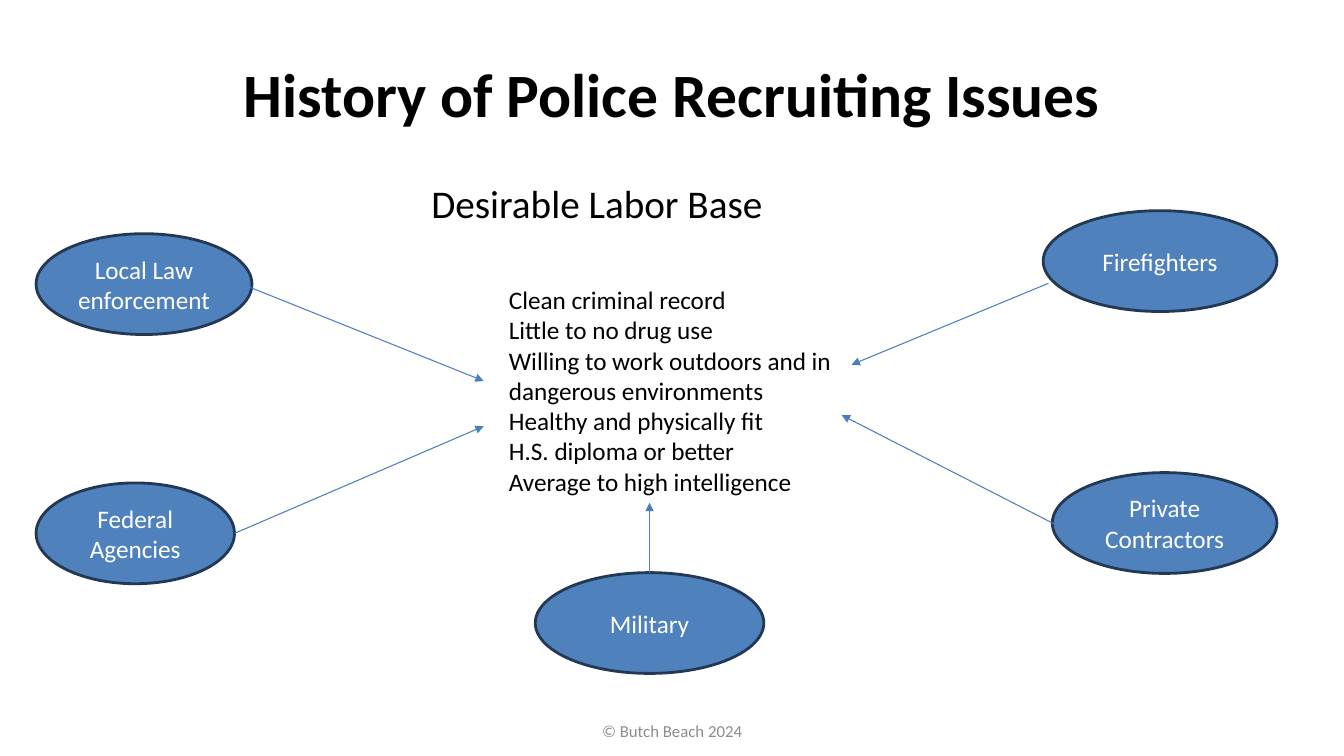
from lxml.etree import SubElement
from pptx import Presentation
from pptx.dml.color import RGBColor
from pptx.enum.shapes import MSO_CONNECTOR as Link, MSO_SHAPE as Preset
from pptx.enum.text import MSO_ANCHOR as Anchor, MSO_AUTO_SIZE as Fit, PP_ALIGN as Align
from pptx.oxml.ns import qn
from pptx.util import Cm, Pt

COLORS = {"text": "000000", "oval": "4F81BD", "outline": "233953",
          "label": "FFFFFF", "arrow": "4B7EBC", "footer": "8C8C8C"}
FONT = "Calibri"
OVAL_HEIGHT = 2.54

TRAITS = ["Clean criminal record", "Little to no drug use",
          "Willing to work outdoors and in dangerous environments",
          "Healthy and physically fit", "H.S. diploma or better",
          "Average to high intelligence"]

# name, oval (left, top, width), arrow start from the oval's corner, arrow tip
RECRUITERS = [
    ("Local Law enforcement", (0.91, 5.89, 5.44), (5.39, 1.35), (12.19, 9.6)),
    ("Federal Agencies", (0.91, 12.17, 5), (5, 1.27), (12.19, 10.74)),
    ("Military", (13.49, 14.43, 5.76), (2.88, 0), (16.37, 12.67)),
    ("Firefighters", (26.29, 5.31, 5.89), (0.13, 1.83), (21.46, 9.19)),
    ("Private Contractors", (26.52, 11.91, 5.66), (0.2, 1.37), (21.21, 10.46)),
]


def color(name):
    return RGBColor.from_string(COLORS[name])


def place(shape, box):
    shape.left, shape.top, shape.width, shape.height = (Cm(side) for side in box)


def write(para, text, size, ink="text", bold=False):
    span = para.add_run()
    span.text = text
    span.font.name = FONT
    span.font.size = Pt(size)
    span.font.bold = bold
    span.font.color.rgb = color(ink)


def add_title(page, box, text):
    title = page.shapes.title
    place(title, box)
    frame = title.text_frame
    frame.auto_size = Fit.NONE
    frame.vertical_anchor = Anchor.MIDDLE
    para = frame.paragraphs[0]
    para.alignment = Align.CENTER
    write(para, text, 44, bold=True)


def add_traits(page, box):
    """Fill the body placeholder with the unbulleted list of traits."""
    body = page.placeholders[1]
    place(body, box)
    frame = body.text_frame
    frame.auto_size = Fit.NONE
    for index, trait in enumerate(TRAITS):
        para = frame.paragraphs[0] if index == 0 else frame.add_paragraph()
        para.space_before = Pt(0)
        properties = para._p.get_or_add_pPr()
        properties.set("marL", "0")
        properties.set("indent", "0")
        SubElement(properties, qn("a:buNone"))
        write(para, trait, 18)


def add_heading(page, box, text):
    frame = page.shapes.add_textbox(*(Cm(side) for side in box)).text_frame
    frame.word_wrap = False
    write(frame.paragraphs[0], text, 28)


def add_footer(page, box, text):
    frame = page.shapes.add_textbox(*(Cm(side) for side in box)).text_frame
    frame.word_wrap = True
    frame.vertical_anchor = Anchor.MIDDLE
    para = frame.paragraphs[0]
    para.alignment = Align.CENTER
    write(para, text, 12, "footer")


def add_oval(page, box, name):
    oval = page.shapes.add_shape(Preset.OVAL, *(Cm(side) for side in box))
    oval.shadow.inherit = False
    oval.fill.solid()
    oval.fill.fore_color.rgb = color("oval")
    oval.line.color.rgb = color("outline")
    oval.line.width = Pt(2)
    frame = oval.text_frame
    frame.word_wrap = True
    frame.vertical_anchor = Anchor.MIDDLE
    para = frame.paragraphs[0]
    para.alignment = Align.CENTER
    write(para, name, 18, "label")
    return oval


def add_arrow(page, start, tip):
    arrow = page.shapes.add_connector(Link.STRAIGHT, *(Cm(side) for side in start + tip))
    arrow.line.color.rgb = color("arrow")
    arrow.line.width = Pt(0.75)
    SubElement(arrow.line._get_or_add_ln(), qn("a:tailEnd"), type="triangle")
    SubElement(arrow._element.spPr, qn("a:effectLst"))
    return arrow


def add_recruiters(page):
    """Draw each competing employer with its arrow to the labor base."""
    for name, (left, top, width), (across, down), tip in RECRUITERS:
        oval = add_oval(page, (left, top, width, OVAL_HEIGHT), name)
        arrow = add_arrow(page, (left + across, top + down), tip)
        if down == 0:
            arrow.begin_connect(oval, 0)


def main():
    deck = Presentation()
    deck.slide_width, deck.slide_height = Cm(33.87), Cm(19.05)
    page = deck.slides.add_slide(deck.slide_layouts[1])
    add_title(page, (1.7, 0.76, 30.48, 3.18), "History of Police Recruiting Issues")
    add_traits(page, (12.57, 7.04, 9.58, 5.64))
    add_heading(page, (10.62, 4.39, 9.17, 1.45), "Desirable Labor Base")
    add_recruiters(page)
    add_footer(page, (11.58, 17.91, 10.72, 1.02), "© Butch Beach 2024")
    deck.save("out.pptx")


if __name__ == "__main__":
    main()
